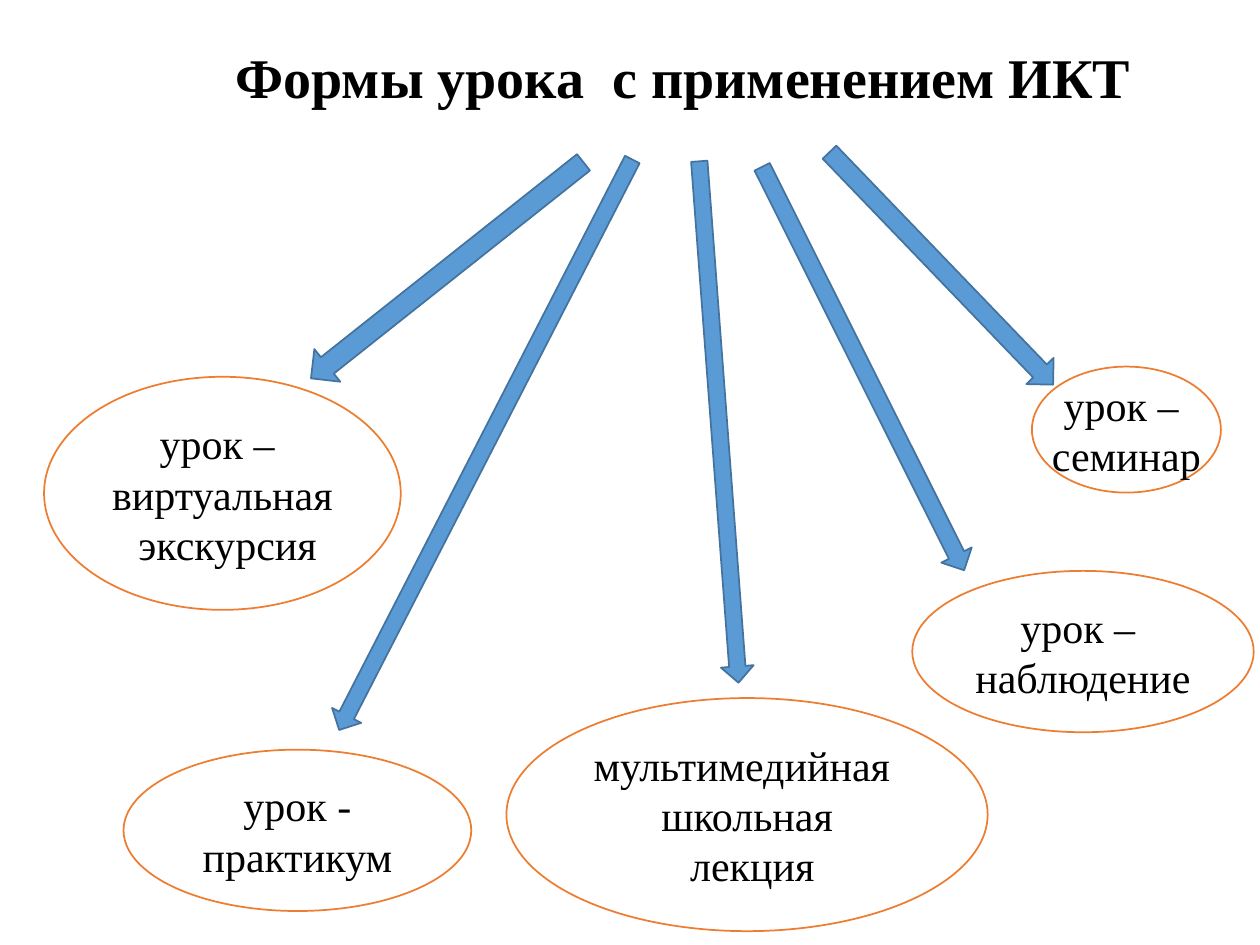
import pptx
import pptx.dml.color
import pptx.enum.shapes
import pptx.enum.text
import pptx.util

Pt = pptx.util.Pt
SHAPES = pptx.enum.shapes.MSO_SHAPE
ALIGN = pptx.enum.text.PP_ALIGN
ANCHOR = pptx.enum.text.MSO_ANCHOR
FONT = "Times New Roman"


def color(hex_code):
    return pptx.dml.color.RGBColor.from_string(hex_code)


def add_outlined(page, kind, bounds, fill, line):
    """Add a preset shape without shadow, with a plain fill and a 1 pt outline."""
    shape = page.shapes.add_shape(kind, *(Pt(length) for length in bounds))
    shape.shadow.inherit = False
    shape.fill.solid()
    shape.fill.fore_color.rgb = color(fill)
    shape.line.color.rgb = color(line)
    shape.line.width = Pt(1)
    return shape


deck = pptx.Presentation()
deck.slide_width, deck.slide_height = Pt(720), Pt(540)
page = deck.slides.add_slide(deck.slide_layouts[5])

# Title
title = page.shapes.title
title.left, title.top, title.width, title.height = Pt(127.4), Pt(20.9), Pt(556), Pt(46)
title.text_frame.text = "Формы урока  с применением ИКТ"
title.text_frame.auto_size = pptx.enum.text.MSO_AUTO_SIZE.NONE
title.text_frame.vertical_anchor = ANCHOR.TOP
para = title.text_frame.paragraphs[0]
para.alignment = ALIGN.LEFT
para.font.name = FONT
para.font.size = Pt(32)
para.font.bold = True
para.font.color.rgb = color("000000")

# Lesson forms: left, top, width, height and lines of text
lesson_forms = [
    ((589.7, 209.5, 108, 72), ["урок – ", "семинар"]),
    ((25.2, 215.3, 203.8, 133.2), ["урок – ", "виртуальная", " экскурсия"]),
    ((70.6, 428.4, 198.7, 92.2), ["урок - практикум"]),
    ((289.4, 398.9, 275, 133.2), ["мультимедийная ", "школьная", " лекция"]),
    ((521.3, 326.2, 195.1, 92.2), ["урок – ", "наблюдение"]),
]
for bounds, lines in lesson_forms:
    oval = add_outlined(page, SHAPES.OVAL, bounds, "FFFFFF", "ED7D31")
    frame = oval.text_frame
    frame.text = "\n".join(lines)
    frame.word_wrap = len(lines) == 1
    frame.vertical_anchor = ANCHOR.MIDDLE
    for para in frame.paragraphs:
        para.alignment = ALIGN.CENTER
        para.font.name = FONT
        para.font.size = Pt(24)
        para.font.color.rgb = color("000000")

# Arrows from the title to the forms: left, top, width, height and rotation
arrows = [
    ((156.2, 142.6, 198.7, 23.8), 141.6),
    ((94.3, 244.8, 366.5, 18.7), 117.2),
    ((261.4, 231.8, 298.8, 18.7), 85.7),
    ((364.3, 200.9, 257.8, 19.4), 63.4),
    ((445.7, 142.6, 184.3, 21.6), 46.1),
]
for bounds, angle in arrows:
    arrow = add_outlined(page, SHAPES.RIGHT_ARROW, bounds, "5B9BD5", "43739E")
    arrow.rotation = angle

deck.save("out.pptx")
